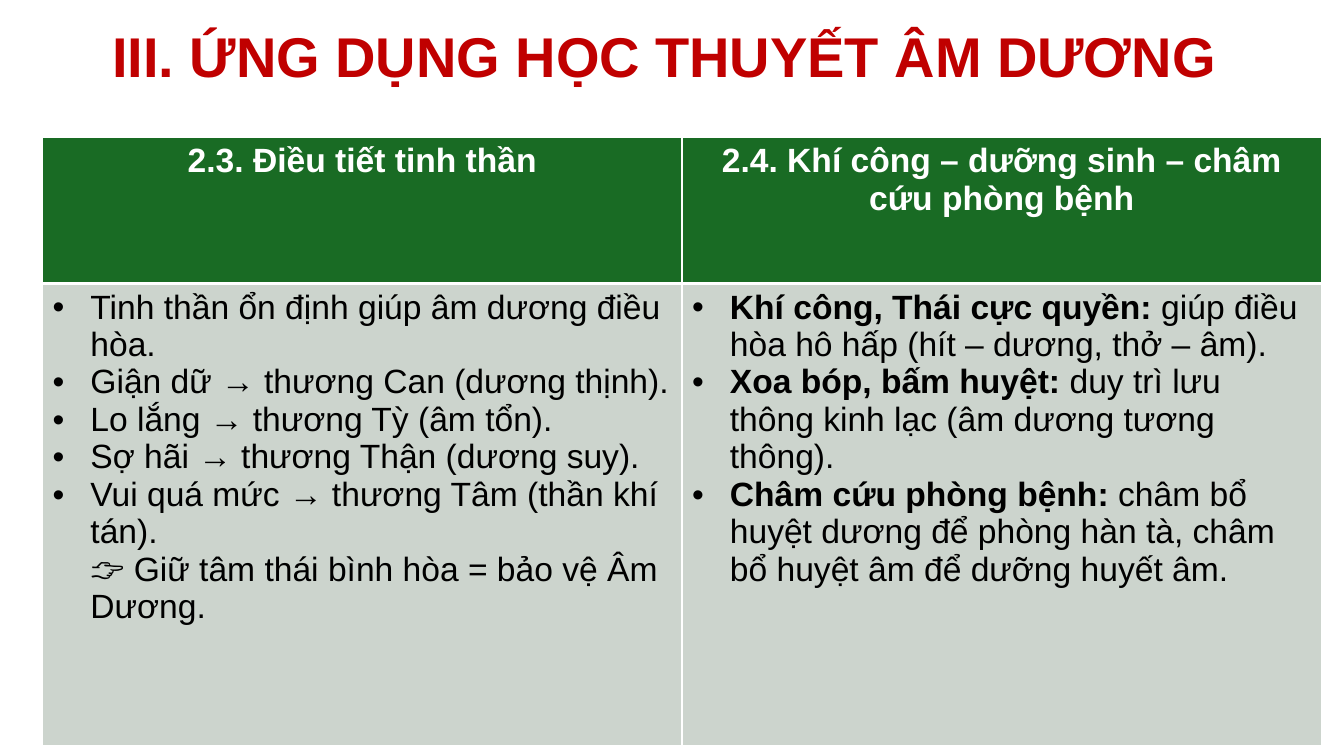
"""Build a slide on applying the Yin-Yang theory, with a title and a two-column table."""
from dataclasses import dataclass

from lxml import etree
from pptx import Presentation
from pptx import util as u
from pptx.dml.color import RGBColor
from pptx.enum import text
from pptx.oxml.ns import qn


@dataclass(frozen=True)
class Theme:
    font: str = "Arial"
    title_size: float = 40
    body_size: float = 24
    title: str = "C00000"
    header_fill: str = "196B24"
    header_text: str = "FFFFFF"
    body_fill: str = "CCD4CD"
    body_text: str = "000000"
    border: str = "FFFFFF"
    thin: float = 1
    thick: float = 3
    indent: float = 27


@dataclass(frozen=True)
class Item:
    rest: str
    lead: str = ""


@dataclass(frozen=True)
class Column:
    heading: str
    items: tuple[Item, ...]


THEME = Theme()
TITLE = "III. ỨNG DỤNG HỌC THUYẾT ÂM DƯƠNG "
COLUMNS = (
    Column("2.3. Điều tiết tinh thần", (
        Item("Tinh thần ổn định giúp âm dương điều hòa."),
        Item("Giận dữ → thương Can (dương thịnh)."),
        Item("Lo lắng → thương Tỳ (âm tổn)."),
        Item("Sợ hãi → thương Thận (dương suy)."),
        Item("Vui quá mức → thương Tâm (thần khí tán).\v"
             "👉 Giữ tâm thái bình hòa = bảo vệ Âm Dương."),
    )),
    Column("2.4. Khí công – dưỡng sinh – châm cứu phòng bệnh", (
        Item(" giúp điều hòa hô hấp (hít – dương, thở – âm).",
             "Khí công, Thái cực quyền:"),
        Item(" duy trì lưu thông kinh lạc (âm dương tương thông).",
             "Xoa bóp, bấm huyệt:"),
        Item(" châm bổ huyệt dương để phòng hàn tà, châm bổ huyệt âm để dưỡng huyết âm.",
             "Châm cứu phòng bệnh:"),
    )),
)


def format_run(r, size: float, color: str, bold: bool) -> None:
    """Apply the theme font with a size, colour and weight."""
    r.font.name = THEME.font
    r.font.size = u.Pt(size)
    r.font.bold = bold
    r.font.color.rgb = RGBColor.from_string(color)


def style_cell(cell, fill: str, top: float, bottom: float) -> None:
    """Fill a cell and draw its four borders."""
    cell.fill.solid()
    cell.fill.fore_color.rgb = RGBColor.from_string(fill)
    tc_pr = cell._tc.get_or_add_tcPr()
    widths = {"a:lnL": THEME.thin, "a:lnR": THEME.thin, "a:lnT": top, "a:lnB": bottom}
    for i, (tag, width) in enumerate(widths.items()):
        ln = etree.Element(qn(tag), w=str(u.Pt(width)))
        solid = etree.SubElement(ln, qn("a:solidFill"))
        etree.SubElement(solid, qn("a:srgbClr"), val=THEME.border)
        tc_pr.insert(i, ln)


def add_bullet(p) -> None:
    """Give a paragraph a hanging bullet."""
    p_pr = p._p.get_or_add_pPr()
    p_pr.set("marL", str(u.Pt(THEME.indent)))
    p_pr.set("indent", str(-u.Pt(THEME.indent)))
    etree.SubElement(p_pr, qn("a:buFont"), typeface=THEME.font)
    etree.SubElement(p_pr, qn("a:buChar"), char="•")


def write_heading(cell, heading: str) -> None:
    """Write a centred column heading."""
    style_cell(cell, THEME.header_fill, THEME.thin, THEME.thick)
    cell.text_frame.text = heading
    p = cell.text_frame.paragraphs[0]
    p.alignment = text.PP_ALIGN.CENTER
    format_run(p.runs[0], THEME.body_size, THEME.header_text, True)


def write_items(cell, items: tuple[Item, ...]) -> None:
    """Write a bulleted list with optional bold lead-ins."""
    style_cell(cell, THEME.body_fill, THEME.thick, THEME.thin)
    tf = cell.text_frame
    for i, item in enumerate(items):
        p = tf.add_paragraph() if i else tf.paragraphs[0]
        p.text = item.lead or item.rest
        if item.lead:
            p.add_run().text = item.rest
        add_bullet(p)
        for j, r in enumerate(p.runs):
            format_run(r, THEME.body_size, THEME.body_text, bool(item.lead) and j == 0)


def add_title(s) -> None:
    """Place and format the title placeholder."""
    sp = s.shapes.title
    sp.left, sp.top, sp.width, sp.height = u.Pt(66), u.Pt(7.2), u.Pt(828), u.Pt(70)
    tf = sp.text_frame
    tf.text = TITLE
    tf.word_wrap = True
    tf.auto_size = text.MSO_AUTO_SIZE.NONE
    tf.vertical_anchor = text.MSO_ANCHOR.MIDDLE
    p = tf.paragraphs[0]
    p.alignment = text.PP_ALIGN.CENTER
    p.line_spacing = 0.9
    format_run(p.runs[0], THEME.title_size, THEME.title, True)


def add_columns(s) -> None:
    """Add the table with one heading and one list per column."""
    table = s.shapes.add_table(2, len(COLUMNS), u.Pt(30.4), u.Pt(98.2),
                               u.Pt(913.6), u.Pt(434.2)).table
    table.horz_banding = False
    table.rows[0].height, table.rows[1].height = u.Pt(104.4), u.Pt(329.8)
    for i, column in enumerate(COLUMNS):
        write_heading(table.cell(0, i), column.heading)
        write_items(table.cell(1, i), column.items)


def main() -> None:
    """Create the presentation and save it."""
    prs = Presentation()
    prs.slide_width, prs.slide_height = u.Pt(960), u.Pt(540)
    s = prs.slides.add_slide(prs.slide_layouts[5])
    add_columns(s)
    add_title(s)
    prs.save("out.pptx")


if __name__ == "__main__":
    main()
